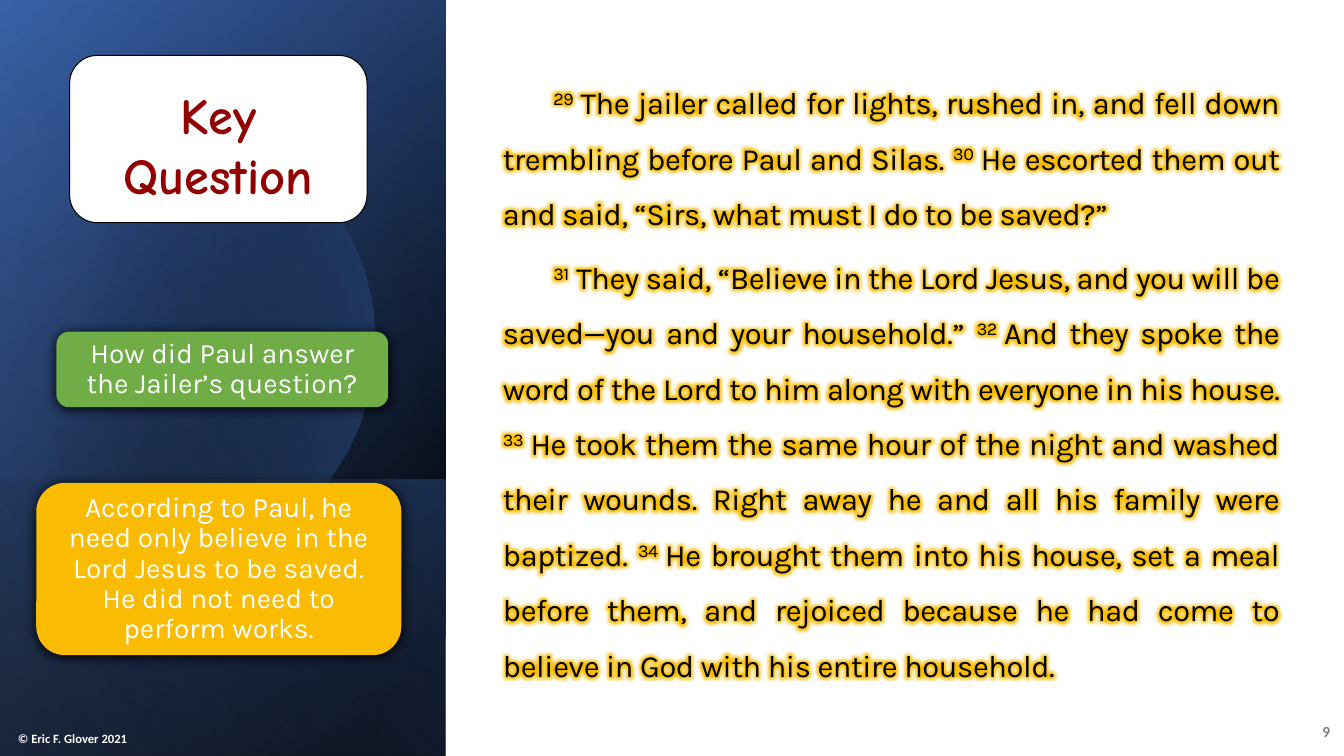
from lxml import etree
from pptx import Presentation
from pptx.dml.color import RGBColor
from pptx.enum.shapes import MSO_SHAPE
from pptx.enum.text import MSO_ANCHOR, PP_ALIGN
from pptx.oxml.ns import qn
from pptx.util import Inches, Pt

RECT, ROUND = MSO_SHAPE.RECTANGLE, MSO_SHAPE.ROUNDED_RECTANGLE
MIDDLE, TOP, BOTTOM = MSO_ANCHOR.MIDDLE, MSO_ANCHOR.TOP, MSO_ANCHOR.BOTTOM
LEFT, CENTER, RIGHT, JUSTIFY = (PP_ALIGN.LEFT, PP_ALIGN.CENTER,
                                PP_ALIGN.RIGHT, PP_ALIGN.JUSTIFY)

WHITE = RGBColor(0xFF, 0xFF, 0xFF)
BLACK = RGBColor(0, 0, 0)
GRAY = RGBColor(0x80, 0x80, 0x80)
DARK_RED = RGBColor(0x91, 0x01, 0x01)
GREEN = RGBColor(0x70, 0xAD, 0x47)
GOLD = RGBColor(0xF9, 0xBC, 0x02)
NAVY = RGBColor(0x2F, 0x55, 0x97)
BLUE = RGBColor(0x44, 0x72, 0xC4)
PALE_BLUE = RGBColor(0x8F, 0xAA, 0xDC)

NBSP = chr(160)
PANEL = (-1.54, 1.54, 7.5, 4.42)

# Panel layers: box, gradient angle, stops of (position, colour, opacity)
BACK_LAYERS = [
    (PANEL, 50, [(8, BLACK, 100), (100, NAVY, 100)]),
    (PANEL, 30, [(0, BLACK, 0), (99, BLUE, 46)]),
    ((0.84, 3.92, 2.74, 4.42), 130, [(2, BLUE, 29), (100, BLACK, 30)]),
]
FRONT_LAYER = (PANEL, 120, [(0, BLACK, 0), (99, PALE_BLUE, 11)])

# Disc outline: Bezier segments, each with two handles and an end point
DISC_START = (1.49, 1.1)
DISC_RIGHT = [
    ((2.46, 1.12), (3.35, 1.77), (3.63, 2.75)),
    ((3.98, 3.97), (3.28, 5.23), (2.07, 5.58)),
    ((1.31, 5.8), (0.53, 5.61), (-0.03, 5.14)),
]
DISC_LEFT_EDGE = [(-0.15, 5.03), (-0.15, 1.75), (0, 1.61)]
DISC_TOP = [
    ((0.23, 1.42), (0.5, 1.28), (0.8, 1.19)),
    ((1.03, 1.13), (1.26, 1.1), DISC_START),
]

PASSAGE = [
    [("29", "The jailer called for lights, rushed in, and fell down trembling "
            "before Paul and Silas. "),
     ("30", "He escorted them out and said, “Sirs, what must I do to be saved?” ")],
    [("31", "They said, “Believe in the Lord Jesus, and you will be saved—you "
            "and your household.” "),
     ("32", "And they spoke the word of the Lord to him along with everyone "
            "in his house. "),
     ("33", "He took them the same hour of the night and washed their wounds. "
            "Right away he and all his family were baptized. "),
     ("34", "He brought them into his house, set a meal before them, and "
            "rejoiced because he had come to believe in God with his entire "
            "household.")],
]


def inches(box):
    return [Inches(value) for value in box]


def set_all(target, values):
    for name, value in values.items():
        setattr(target, name, value)


def add_child(parent, tag, **attributes):
    return etree.SubElement(parent, qn(tag),
                            {key: str(value) for key, value in attributes.items()})


def add_color(parent, color, opacity=100):
    node = add_child(parent, "a:srgbClr", val=color)
    if opacity < 100:
        add_child(node, "a:alpha", val=opacity * 1000)


def gradient(shape, angle, stops):
    shape.shadow.inherit = False
    shape.line.fill.background()
    shape.fill.gradient()
    grad = shape.fill._xPr.find(qn("a:gradFill"))
    for child in list(grad):
        grad.remove(child)
    grad.set("rotWithShape", "1")
    stop_list = add_child(grad, "a:gsLst")
    for position, color, opacity in stops:
        add_color(add_child(stop_list, "a:gs", pos=position * 1000), color, opacity)
    add_child(grad, "a:lin", ang=angle * 60000, scaled=0)


def add_layer(slide, box, angle, stops):
    layer = slide.shapes.add_shape(RECT, *inches(box))
    layer.rotation = 90
    layer._element.spPr.find(qn("a:xfrm")).set("flipH", "1")
    gradient(layer, angle, stops)


def curve_points(start, segments, steps=12):
    points = []
    for handle_1, handle_2, end in segments:
        for step in range(1, steps + 1):
            t = step / steps
            points.append(tuple(
                (1 - t) ** 3 * a + 3 * (1 - t) ** 2 * t * b
                + 3 * (1 - t) * t ** 2 * c + t ** 3 * d
                for a, b, c, d in zip(start, handle_1, handle_2, end)))
        start = end
    return points


def add_disc(slide):
    outline = (curve_points(DISC_START, DISC_RIGHT) + DISC_LEFT_EDGE
               + curve_points(DISC_LEFT_EDGE[-1], DISC_TOP))
    builder = slide.shapes.build_freeform(*inches(DISC_START))
    builder.add_line_segments([inches(point) for point in outline], close=True)
    gradient(builder.convert_to_shape(), 14, [(29, BLACK, 0), (100, BLUE, 43)])


def add_block(slide, box, color, line=None, shadow=False, kind=ROUND):
    block = slide.shapes.add_shape(kind, *inches(box))
    block.shadow.inherit = False
    block.fill.solid()
    block.fill.fore_color.rgb = color
    if line is None:
        block.line.fill.background()
    else:
        block.line.color.rgb = line
        block.line.width = Pt(0.75)
    if shadow:
        effects = block._element.spPr.find(qn("a:effectLst"))
        outer = add_child(effects, "a:outerShdw", blurRad=Pt(8.5), dist=Pt(1),
                          dir=90 * 60000, algn="t", rotWithShape=0)
        add_color(outer, BLACK)
    return block


def style_run(run, font, size, color, bold=False):
    set_all(run.font, {"name": font, "size": Pt(size), "bold": bold})
    run.font.color.rgb = color


def write(shape, text, style, anchor=MIDDLE, margins=None, **paragraph_format):
    frame = shape.text_frame
    set_all(frame, {"word_wrap": True, "vertical_anchor": anchor, **(margins or {})})
    paragraph = frame.paragraphs[0]
    set_all(paragraph, paragraph_format)
    run = paragraph.add_run()
    run.text = text
    style_run(run, *style)


def add_verse_run(paragraph, text, raised):
    run = paragraph.add_run()
    run.text = text
    style_run(run, "Karla", 22, BLACK)
    properties = run.font._element
    properties.set("spc", "-25")
    if raised:
        properties.set("baseline", "30000")
    effects = etree.Element(qn("a:effectLst"))
    add_color(add_child(effects, "a:glow", rad=Pt(8)), GOLD)
    properties.find(qn("a:solidFill")).addnext(effects)


def add_passage(slide):
    frame = slide.shapes.add_textbox(*inches((4.89, 0.6, 7.9, 6.23))).text_frame
    set_all(frame, {"word_wrap": True, "vertical_anchor": TOP})
    for index, verses in enumerate(PASSAGE):
        paragraph = frame.add_paragraph() if index else frame.paragraphs[0]
        set_all(paragraph, {"alignment": JUSTIFY, "line_spacing": 1.5,
                            "space_after": Pt(6)})
        paragraph._p.get_or_add_pPr().set("indent", str(Inches(0.5)))
        for number, verse in verses:
            add_verse_run(paragraph, number, True)
            add_verse_run(paragraph, NBSP + verse, False)


def main():
    deck = Presentation()
    set_all(deck, {"slide_width": Inches(13.33), "slide_height": Inches(7.5)})
    slide = deck.slides.add_slide(deck.slide_layouts[6])

    # Backdrop and blue side panel
    add_block(slide, (0, 0, 13.33, 7.5), WHITE, kind=RECT)
    for layer in BACK_LAYERS:
        add_layer(slide, *layer)
    add_disc(slide)
    add_layer(slide, *FRONT_LAYER)

    # Page number, title and copyright
    page_number = slide.shapes.add_textbox(*inches((12.8, 7.06, 0.49, 0.4)))
    write(page_number, "9", ("Calibri", 11, GRAY, True),
          alignment=RIGHT, space_after=Pt(6))
    title = add_block(slide, (0.69, 0.55, 2.95, 1.66), WHITE, line=BLACK)
    write(title, "Key Question", ("Comic Neue", 36, DARK_RED, True),
          margins={"margin_top": Inches(0.1), "margin_bottom": 0},
          alignment=CENTER, space_after=Pt(6))
    copyright_line = slide.shapes.add_textbox(*inches((0.08, 7.17, 1.57, 0.28)))
    write(copyright_line, "© Eric F. Glover 2021", ("Calibri", 9, WHITE, True),
          anchor=BOTTOM, alignment=LEFT)

    add_passage(slide)

    # Question and answer
    for box, color, text in [
        ((0.56, 3.29, 3.29, 0.75), GREEN, "How did Paul answer the Jailer’s question?"),
        ((0.36, 4.79, 3.62, 1.71), GOLD,
         "According to Paul, he need only believe in the Lord Jesus to be saved. "
         "He did not need to perform works."),
    ]:
        write(add_block(slide, box, color, shadow=True), text, ("Karla", 20, WHITE),
              margins={"margin_top": 0, "margin_bottom": 0},
              alignment=CENTER, line_spacing=0.9)

    deck.save("out.pptx")


if __name__ == "__main__":
    main()
